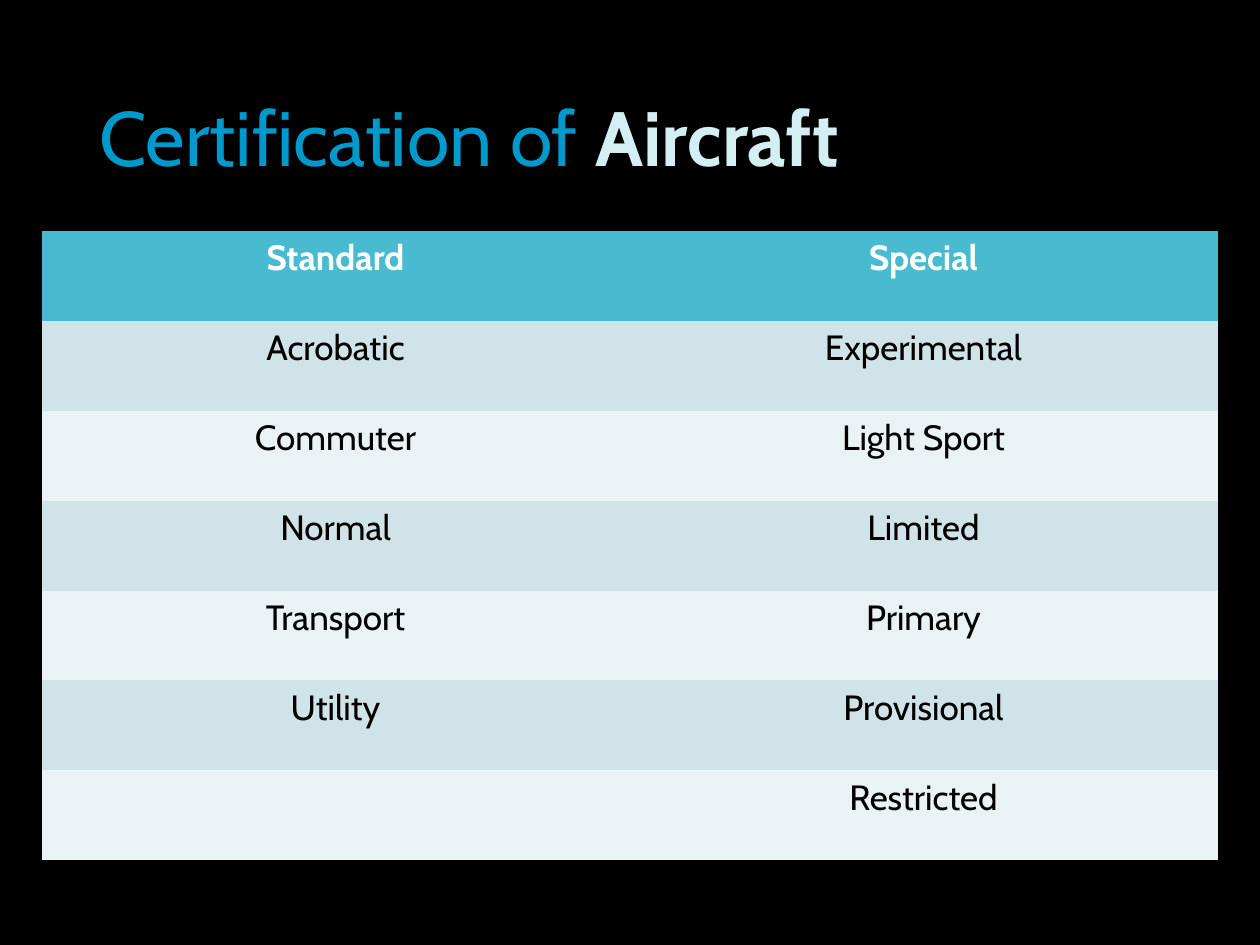
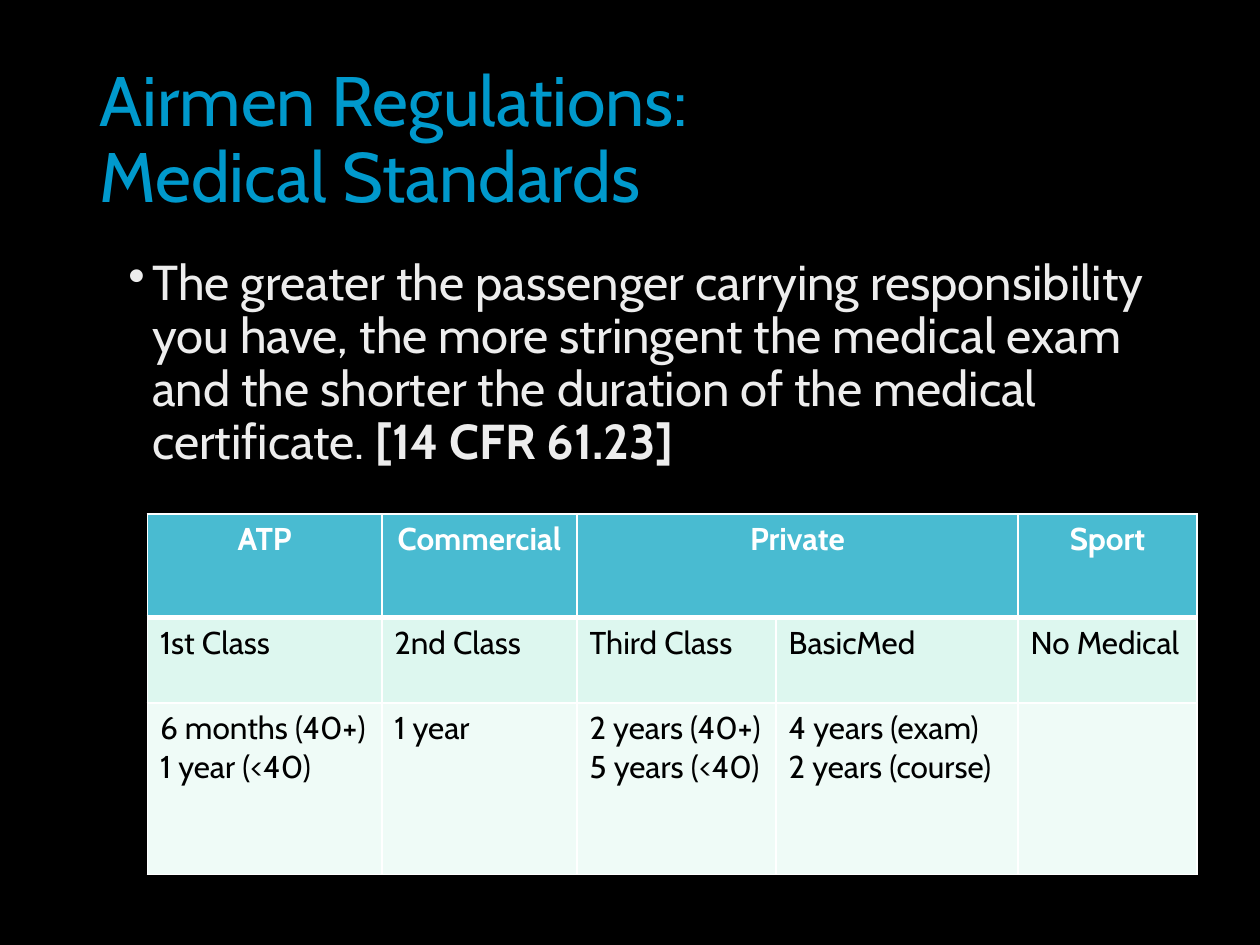
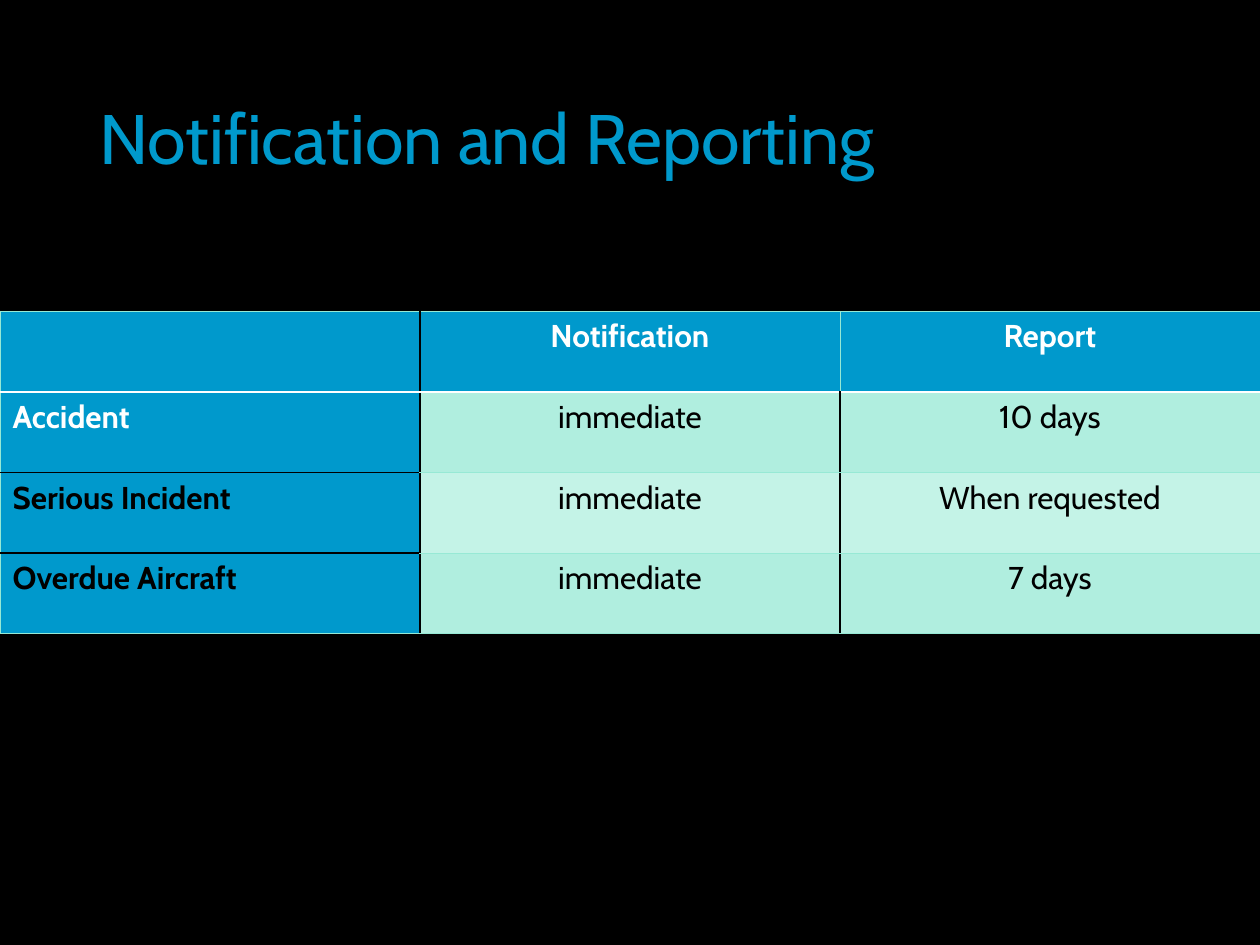
import pptx
import pptx.dml.color
import pptx.enum.text
import pptx.oxml
import pptx.oxml.ns
import pptx.util

Inches = pptx.util.Inches
Pt = pptx.util.Pt
ALIGN = pptx.enum.text.PP_ALIGN
ANCHOR = pptx.enum.text.MSO_ANCHOR

FONT = "Cabin"
PLAIN_TABLE_STYLE = "{2D5ABB26-0587-4C30-8999-92F81FD0307C}"
COLORS = {
    "black": "000000",
    "white": "FFFFFF",
    "blue": "0099CC",
    "pale blue": "D4EFF4",
    "light grey": "EDEDED",
    "teal": "49BBD1",
    "grey band": "CFE3E8",
    "pale grey band": "E9F2F4",
    "mint band": "DDF7EF",
    "pale mint band": "EFFBF7",
    "green line": "97E9D5",
    "green band": "B0EEDF",
    "pale green band": "C4F3E7",
}


def rgb(color):
    return pptx.dml.color.RGBColor.from_string(COLORS[color])


class Slides:
    """Holds the shared style and the slide being built."""

    def __init__(self):
        self.deck = pptx.Presentation()
        self.deck.slide_width = Inches(10)
        self.deck.slide_height = Inches(7.5)
        self.page = None

    def new_page(self):
        self.page = self.deck.slides.add_slide(self.deck.slide_layouts[6])
        fill = self.page.background.fill
        fill.solid()
        fill.fore_color.rgb = rgb("black")

    def span(self, para, text, size, color, bold=False):
        span = para.add_run()
        span.text = text
        span.font.name = FONT
        span.font.size = Pt(size)
        span.font.bold = bold
        span.font.color.rgb = rgb(color)

    def text_box(self, left, top, width, height, anchor):
        """Add a wrapping box and return its first paragraph."""
        box = self.page.shapes.add_textbox(
            Inches(left), Inches(top), Inches(width), Inches(height))
        box.text_frame.word_wrap = True
        box.text_frame.vertical_anchor = anchor
        para = box.text_frame.paragraphs[0]
        para.line_spacing = 0.9
        return para

    def title(self, *lines, size=40, strong=None):
        para = self.text_box(0.69, 0.4, 8.62, 1.45, ANCHOR.MIDDLE)
        for number, line in enumerate(lines):
            if number:
                para.add_line_break()
            self.span(para, line, size, "blue")
        if strong:
            self.span(para, strong, size, "pale blue", bold=True)

    def bullet(self, text, strong):
        para = self.text_box(0.92, 2, 8.39, 4.76, ANCHOR.TOP)
        properties = para._p.get_or_add_pPr()
        properties.set("marL", str(Inches(0.19)))
        properties.set("indent", str(-Inches(0.19)))
        mark = pptx.oxml.parse_xml(
            f'<a:buChar {pptx.oxml.ns.nsdecls("a")} char="•"/>')
        properties.append(mark)
        self.span(para, text, 28, "light grey")
        self.span(para, strong, 28, "light grey", bold=True)

    def border(self, cell, side, color, width):
        line = pptx.oxml.parse_xml(
            f'<a:ln{side} {pptx.oxml.ns.nsdecls("a")} w="{Pt(width)}">'
            f'<a:solidFill><a:srgbClr val="{COLORS[color]}"/></a:solidFill>'
            f'</a:ln{side}>')
        cell._tc.get_or_add_tcPr().append(line)

    def table(self, left, top, widths, heights, rows, size, look, merge=None):
        """look(row, column) gives fill, text colour, bold, alignment, borders."""
        frame = self.page.shapes.add_table(
            len(heights), len(widths), Inches(left), Inches(top),
            Inches(sum(widths)), Inches(sum(heights)))
        table = frame.table
        style = table._tbl.tblPr.find(pptx.oxml.ns.qn("a:tableStyleId"))
        style.text = PLAIN_TABLE_STYLE
        for column, width in zip(table.columns, widths):
            column.width = Inches(width)
        for row, height in zip(table.rows, heights):
            row.height = Inches(height)
        if merge:
            start, end = merge
            table.cell(*start).merge(table.cell(*end))
        for r, texts in enumerate(rows):
            for c, text in enumerate(texts):
                cell = table.cell(r, c)
                fill, color, bold, align, borders = look(r, c)
                for side in "LRTB":
                    if side in borders:
                        self.border(cell, side, *borders[side])
                cell.fill.solid()
                cell.fill.fore_color.rgb = rgb(fill)
                for number, line in enumerate(text.split("\n") if text else []):
                    frame_text = cell.text_frame
                    para = (frame_text.add_paragraph() if number
                            else frame_text.paragraphs[0])
                    para.alignment = align
                    self.span(para, line, size, color, bold)


def aircraft_look(row, column):
    if row == 0:
        return "teal", "white", True, ALIGN.CENTER, {}
    fill = "grey band" if row % 2 else "pale grey band"
    return fill, "black", False, ALIGN.CENTER, {}


def medical_look(row, column):
    borders = {side: ("white", 1) for side in "LRTB"}
    if row == 0:
        borders["B"] = ("white", 3)
        return "teal", "white", True, ALIGN.CENTER, borders
    if row == 1:
        borders["T"] = ("white", 3)
    fill = "mint band" if row == 1 else "pale mint band"
    return fill, "black", False, ALIGN.LEFT, borders


def reporting_look(row, column):
    def level_edge(edge):
        """Line above the row numbered edge."""
        if edge == 1:
            return "white", 1
        if column == 0 and edge in (2, 3):
            return "black", 1
        return "green line", 0.5

    def upright_edge(edge):
        """Line left of the column numbered edge."""
        if edge == 1 or (edge == 2 and row > 0):
            return "black", 1
        return "green line", 0.5

    borders = {"L": upright_edge(column), "R": upright_edge(column + 1),
               "T": level_edge(row), "B": level_edge(row + 1)}
    if row == 0:
        return "blue", "white", True, ALIGN.CENTER, borders
    if column == 0:
        color = "white" if row == 1 else "black"
        return "blue", color, True, ALIGN.LEFT, borders
    fill = "green band" if row % 2 else "pale green band"
    return fill, "black", False, ALIGN.CENTER, borders


def main():
    slides = Slides()

    # Aircraft categories
    slides.new_page()
    slides.title("Certification of ", size=44, strong="Aircraft")
    categories = [
        ("Standard", "Special"),
        ("Acrobatic", "Experimental"),
        ("Commuter", "Light Sport"),
        ("Normal", "Limited"),
        ("Transport", "Primary"),
        ("Utility", "Provisional"),
        ("", "Restricted"),
    ]
    slides.table(0.33, 1.83, [14 / 3] * 2, [5 / 7] * 7, categories, 20,
                 aircraft_look)

    # Medical certificates
    slides.new_page()
    slides.title("Airmen Regulations: ", "Medical Standards")
    slides.bullet(
        "The greater the passenger carrying responsibility you have, the more "
        "stringent the medical exam and the shorter the duration of the "
        "medical certificate. ", "[14 CFR 61.23]")
    certificates = [
        ("ATP", "Commercial", "Private", "", "Sport"),
        ("1st Class", "2nd Class", "Third Class", "BasicMed", "No Medical"),
        ("6 months (40+)\n1 year (<40)", "1 year",
         "2 years (40+)\n5 years (<40)", "4 years (exam)\n2 years (course)",
         ""),
    ]
    slides.table(1.17, 4.08, [1.86, 1.55, 1.58, 1.92, 1.42],
                 [0.82, 0.68, 1.36], certificates, 18, medical_look,
                 merge=((0, 2), (0, 3)))

    # Reporting deadlines
    slides.new_page()
    slides.title("Notification and Reporting")
    deadlines = [
        ("", "Notification", "Report"),
        ("Accident", "immediate", "10 days"),
        ("Serious Incident", "immediate", "When requested"),
        ("Overdue Aircraft", "immediate", "7 days"),
    ]
    slides.table(0, 2.47, [10 / 3] * 3, [0.64] * 4, deadlines, 18,
                 reporting_look)

    slides.deck.save("out.pptx")


if __name__ == "__main__":
    main()
